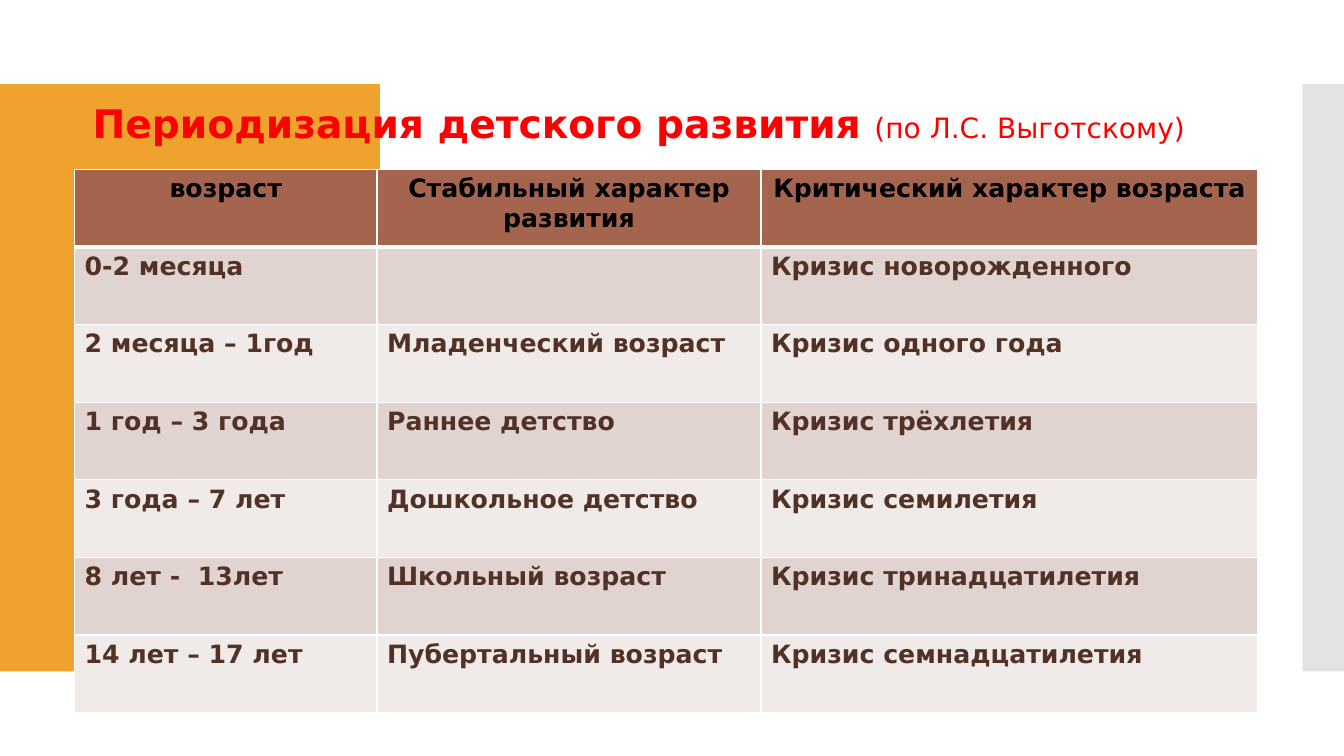
from dataclasses import dataclass

from lxml import etree
from pptx import Presentation
from pptx.dml import color
from pptx.enum import shapes, text
from pptx.oxml import ns
from pptx.util import Pt

FONT = "DejaVu Sans"
WHITE, BLACK, RED = "FFFFFF", "000000", "FF0000"
ORANGE, GREY, BROWN = "F0A22E", "C8C8C8", "523227"
HEADER_FILL, BAND_FILLS = "A5644E", ("E1D3D0", "F0EAE9")

COLUMN_WIDTHS = (216, 274.3, 355)
ROW_HEIGHT = 55.44
ROWS = (
    ("возраст", "Стабильный характер развития", "Критический характер возраста"),
    ("0-2 месяца", "", "Кризис новорожденного"),
    ("2 месяца – 1год", "Младенческий возраст", "Кризис одного года"),
    ("1 год – 3 года", "Раннее детство", "Кризис трёхлетия"),
    ("3 года – 7 лет", "Дошкольное детство", "Кризис семилетия"),
    ("8 лет -  13лет", "Школьный возраст", "Кризис тринадцатилетия"),
    ("14 лет – 17 лет", "Пубертальный возраст", "Кризис семнадцатилетия"),
)


@dataclass
class Panel:
    left: float
    width: float
    fill: str
    opacity: int = 100


@dataclass
class Run:
    text: str
    size: float
    color: str
    bold: bool


PANELS = (Panel(0, 271.4, ORANGE), Panel(930.2, 29.8, GREY, 50))
TITLE = (
    Run("Периодизация детского развития ", 28, RED, True),
    Run("(по Л.С. Выготскому)", 20, RED, False),
)


def rgb(value: str) -> color.RGBColor:
    return color.RGBColor.from_string(value)


def set_fill(target, value: str) -> None:
    target.fill.solid()
    target.fill.fore_color.rgb = rgb(value)


def add_run(p, run: Run) -> None:
    r = p.add_run()
    r.text = run.text
    r.font.name = FONT
    r.font.size = Pt(run.size)
    r.font.bold = run.bold
    r.font.color.rgb = rgb(run.color)


def add_panel(s, panel: Panel) -> None:
    sp = s.shapes.add_shape(shapes.MSO_SHAPE.RECTANGLE, Pt(panel.left), Pt(60),
                            Pt(panel.width), Pt(419.6))
    sp.shadow.inherit = False
    sp.line.fill.background()
    set_fill(sp, panel.fill)
    if panel.opacity < 100:
        clr = sp.fill._xPr.find(".//" + ns.qn("a:srgbClr"))
        etree.SubElement(clr, ns.qn("a:alpha"), val=str(panel.opacity * 1000))


def add_title(s) -> None:
    sp = s.shapes.add_textbox(Pt(44.6), Pt(67.7), Pt(836.6), Pt(44))
    tf = sp.text_frame
    tf.word_wrap = True
    tf.margin_left = Pt(21.6)
    tf.vertical_anchor = text.MSO_ANCHOR.MIDDLE
    p = tf.paragraphs[0]
    p.line_spacing = 0.9
    for run in TITLE:
        add_run(p, run)


def set_borders(cell, top: float, bottom: float) -> None:
    """Draw white cell edges; the side edges are always 1 pt."""
    props = cell._tc.get_or_add_tcPr()
    for i, (side, width) in enumerate((("L", 1), ("R", 1), ("T", top), ("B", bottom))):
        ln = etree.Element(ns.qn("a:ln" + side), w=str(Pt(width)))
        fill = etree.SubElement(ln, ns.qn("a:solidFill"))
        etree.SubElement(fill, ns.qn("a:srgbClr"), val=WHITE)
        props.insert(i, ln)


def add_periods_table(s) -> None:
    frame = s.shapes.add_table(len(ROWS), len(COLUMN_WIDTHS), Pt(53.3), Pt(121),
                               Pt(sum(COLUMN_WIDTHS)), Pt(ROW_HEIGHT * len(ROWS)))
    table = frame.table
    for column, width in zip(table.columns, COLUMN_WIDTHS):
        column.width = Pt(width)
    for i, row in enumerate(ROWS):
        table.rows[i].height = Pt(ROW_HEIGHT)
        header = i == 0
        for j, label in enumerate(row):
            cell = table.cell(i, j)
            set_fill(cell, HEADER_FILL if header else BAND_FILLS[(i - 1) % 2])
            set_borders(cell, top=3 if i == 1 else 1, bottom=3 if header else 1)
            p = cell.text_frame.paragraphs[0]
            p.alignment = text.PP_ALIGN.CENTER if header else text.PP_ALIGN.LEFT
            if label:
                add_run(p, Run(label, 18, BLACK if header else BROWN, True))


def main() -> None:
    prs = Presentation()
    prs.slide_width, prs.slide_height = Pt(960), Pt(540)
    s = prs.slides.add_slide(prs.slide_layouts[6])
    for panel in PANELS:
        add_panel(s, panel)
    add_title(s)
    add_periods_table(s)
    prs.save("out.pptx")


if __name__ == "__main__":
    main()
